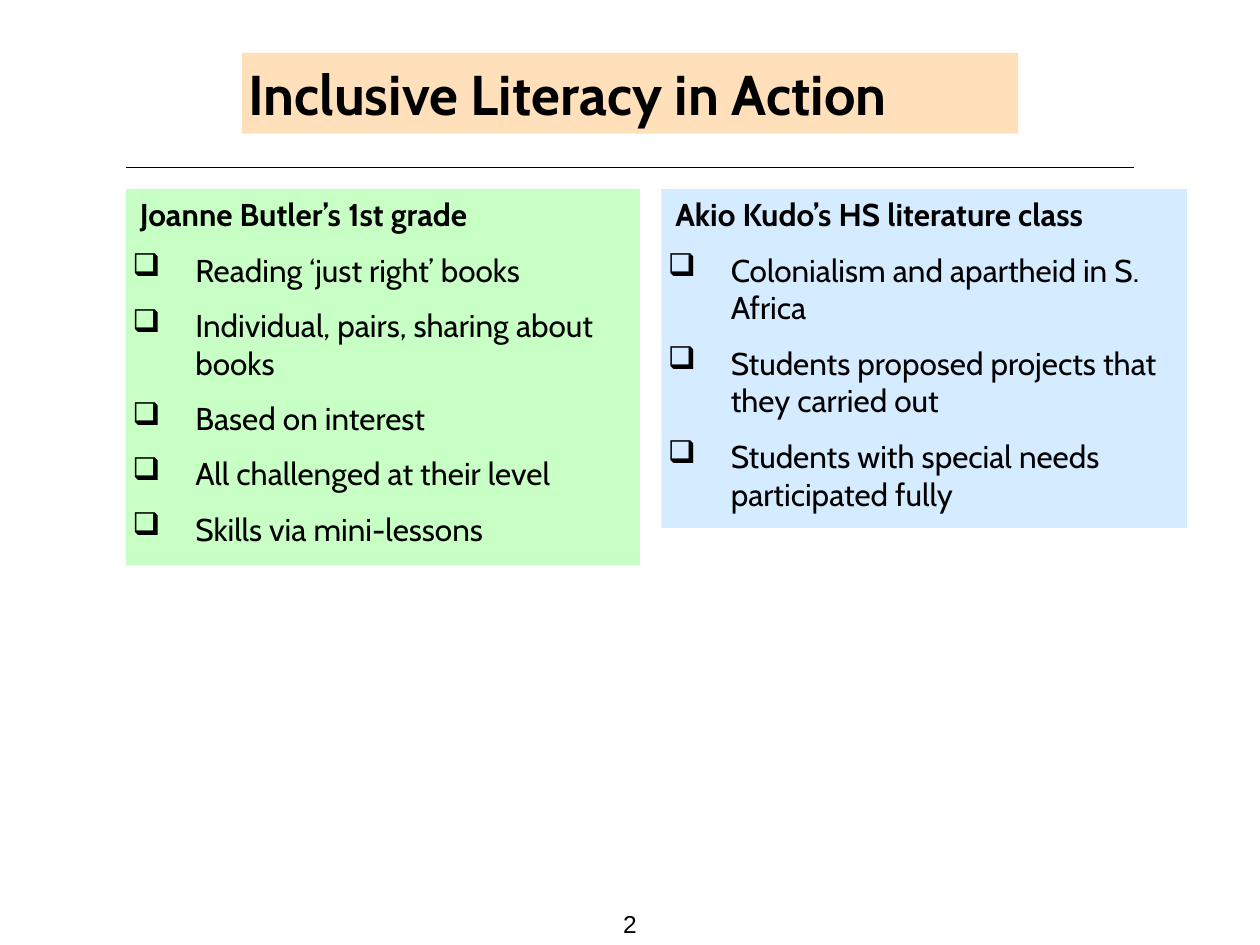
from lxml.etree import SubElement
from pptx import Presentation
from pptx.dml.color import RGBColor
from pptx.enum.shapes import MSO_CONNECTOR, MSO_SHAPE
from pptx.enum.text import MSO_ANCHOR as ANCHOR, MSO_AUTO_SIZE, PP_ALIGN as ALIGN
from pptx.oxml.ns import qn
from pptx.util import Inches, Pt

COLORS = {
    "text": "000000",
    "title": "FFE0BA",
    "first_grade": "C8FFC5",
    "high_school": "D5EBFF",
}
PANELS = [
    ("first_grade", (1, 1.5, 4.08, 2.99), "Joanne Butler’s 1st grade", [
        "Reading ‘just right’ books",
        "Individual, pairs, sharing about books",
        "Based on interest",
        "All challenged at their level",
        "Skills via mini-lessons",
    ]),
    ("high_school", (5.25, 1.5, 4.17, 2.69), "Akio Kudo’s HS literature class", [
        "Colonialism and apartheid in S. Africa",
        "Students proposed projects that they carried out",
        "Students with special needs participated fully",
    ]),
]


def color(name):
    return RGBColor.from_string(COLORS[name])


def fill_shape(shape, name):
    shape.fill.solid()
    shape.fill.fore_color.rgb = color(name)


def prepare_frame(shape, anchor=ANCHOR.TOP, wrap=True):
    frame = shape.text_frame
    settings = {
        "margin_left": Inches(0.05), "margin_top": Inches(0.05),
        "margin_right": Inches(0.05), "margin_bottom": Inches(0.05),
        "auto_size": MSO_AUTO_SIZE.NONE,
        "vertical_anchor": anchor, "word_wrap": wrap,
    }
    for name, value in settings.items():
        setattr(frame, name, value)
    return frame


def write(paragraph, text, size, font="Cabin", bold=False, align=ALIGN.LEFT):
    paragraph.text = text
    paragraph.alignment = align
    for name, value in {"name": font, "size": Pt(size), "bold": bold}.items():
        setattr(paragraph.font, name, value)
    paragraph.font.color.rgb = color("text")


def set_indent(paragraph, left, first=0, bullet=None):
    properties = paragraph._p.get_or_add_pPr()
    properties.set("marL", str(Inches(left)))
    properties.set("indent", str(Inches(first)))
    if bullet:
        SubElement(properties, qn("a:buChar"), char=bullet)


def add_title(slide, text):
    title = slide.shapes.title
    title.left, title.top = Inches(1.92), Inches(0.42)
    title.width, title.height = Inches(6.16), Inches(0.64)
    fill_shape(title, "title")
    write(prepare_frame(title).paragraphs[0], text, 32, bold=True)


def add_panel(slide, fill, box, heading, items):
    panel = slide.shapes.add_shape(MSO_SHAPE.RECTANGLE, *map(Inches, box))
    panel.shadow.inherit = False
    panel.line.fill.background()
    fill_shape(panel, fill)
    frame = prepare_frame(panel)
    set_indent(frame.paragraphs[0], 0.06)
    write(frame.paragraphs[0], heading, 18, bold=True)
    for item in items:
        paragraph = frame.add_paragraph()
        paragraph.space_before = Pt(10)
        set_indent(paragraph, 0.5, -0.5, "❑")
        write(paragraph, item, 18)


def add_rule(slide):
    y = Inches(1.33)
    rule = slide.shapes.add_connector(
        MSO_CONNECTOR.STRAIGHT, Inches(1), y, Inches(9), y)
    rule.line.width = Pt(0.75)
    rule.line.color.rgb = color("text")
    SubElement(rule._element.spPr, qn("a:effectLst"))


def add_page_number(slide, number):
    box = slide.shapes.add_textbox(
        Inches(4.89), Inches(7.16), Inches(0.22), Inches(0.34))
    frame = prepare_frame(box, ANCHOR.BOTTOM, wrap=False)
    write(frame.paragraphs[0], number, 14, "Arial", align=ALIGN.CENTER)


def main():
    presentation = Presentation()
    presentation.slide_width = Inches(10)
    presentation.slide_height = Inches(7.5)
    slide = presentation.slides.add_slide(presentation.slide_layouts[5])
    add_title(slide, "Inclusive Literacy in Action")
    add_rule(slide)
    for panel in PANELS:
        add_panel(slide, *panel)
    add_page_number(slide, "2")
    presentation.save("out.pptx")


if __name__ == "__main__":
    main()
